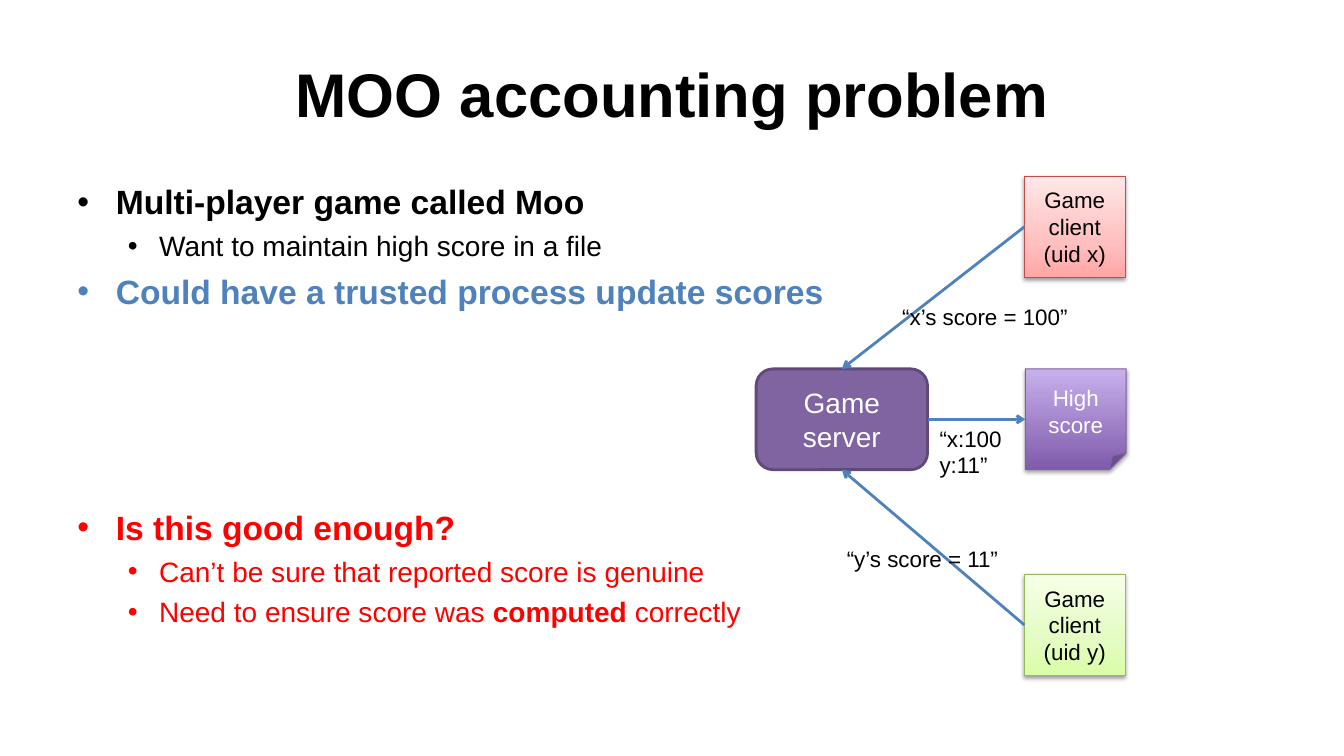
from dataclasses import dataclass

from lxml.etree import SubElement
from pptx import Presentation
from pptx.dml.color import RGBColor
from pptx.enum.shapes import MSO_CONNECTOR, MSO_SHAPE as SHAPE
from pptx.enum.text import MSO_ANCHOR, MSO_AUTO_SIZE, PP_ALIGN
from pptx.oxml.ns import qn
from pptx.util import Inches, Pt


@dataclass(frozen=True)
class Theme:
    font: str = "Arial"
    black: str = "000000"
    white: str = "FFFFFF"
    blue: str = "4F81BD"
    red: str = "FF0000"
    server_fill: str = "8064A2"
    server_line: str = "5F4A78"
    title: int = 44
    heading: int = 24
    detail: int = 20
    small: int = 16


THEME = Theme()
TITLE = "MOO accounting problem"
BULLETS = [
    (0, THEME.black, 6, [("Multi-player game called Moo", True)]),
    (1, THEME.black, 5, [("Want to maintain high score in a file", False)]),
    (0, THEME.blue, 6, [("Could have a trusted process update scores", True)]),
    (0, THEME.red, 140, [("Is this good enough?", True)]),
    (1, THEME.red, 5, [("Can’t be sure that reported score is genuine", False)]),
    (1, THEME.red, 5, [("Need to ensure score was ", False), ("computed ", True),
                       ("correctly", False)]),
]
LEVELS = [(0.38, -0.38, THEME.heading), (0.81, -0.31, THEME.detail)]
TILES = {
    "score": (SHAPE.FOLDED_CORNER, 10.17, 3.66, ["High score"], THEME.white, "7D60A0",
              [(0, "7F5BAB"), (100, "C8B0ED")], 35),
    "client y": (SHAPE.RECTANGLE, 10.16, 5.7, ["Game client", "(uid y)"], THEME.black, "98B955",
                 [(0, "DAFDA7"), (35, "E4FCC2"), (100, "F5FFE7")], 38),
    "client x": (SHAPE.RECTANGLE, 10.16, 1.75, ["Game client (uid x)"], THEME.black, "BF4C48",
                 [(0, "FFA6A5"), (35, "FFC0BF"), (100, "FFE7E7")], 38),
}
SERVER = (7.5, 3.66, 1.7, 1)
TOP, LEFT, BOTTOM, RIGHT = range(4)
ARROWS = [("client x", LEFT, "server", TOP), ("client y", LEFT, "server", BOTTOM),
          ("server", RIGHT, "score", LEFT)]
LABELS = [
    ((8.85, 2.96, 1.85, 0.37), ["“x’s score = 100”"]),
    ((8.3, 5.36, 1.72, 0.37), ["“y’s score = 11”"]),
    ((9.22, 4.16, 0.83, 0.64), ["“x:100", "y:11”"]),
]


def inches(*lengths):
    return [Inches(length) for length in lengths]


def add_span(para, text, size, color, bold=False):
    span = para.add_run()
    span.text = text
    span.font.name, span.font.size, span.font.bold = THEME.font, Pt(size), bold
    span.font.color.rgb = RGBColor.from_string(color)


def write(box, lines, size, color, align=PP_ALIGN.CENTER, bold=False, wrap=True):
    frame = box.text_frame
    frame.word_wrap = wrap
    frame.vertical_anchor = MSO_ANCHOR.MIDDLE
    for index, line in enumerate(lines):
        para = frame.add_paragraph() if index else frame.paragraphs[0]
        para.alignment = align
        add_span(para, line, size, color, bold)


def add_title(page):
    title = page.shapes.title
    title.left, title.top, title.width, title.height = inches(0.67, 0.3, 12, 1.25)
    write(title, [TITLE], THEME.title, THEME.black, bold=True)


def add_bullets(page):
    frame = page.shapes.add_textbox(*inches(0.67, 1.75, 12, 4.95)).text_frame
    frame.word_wrap = True
    for index, (level, color, space, spans) in enumerate(BULLETS):
        para = frame.add_paragraph() if index else frame.paragraphs[0]
        margin, indent, size = LEVELS[level]
        para.level, para.space_before = level, Pt(space)
        props = para._p.get_or_add_pPr()
        props.set("marL", str(Inches(margin)))
        props.set("indent", str(Inches(indent)))
        SubElement(props, qn("a:buFont"), typeface=THEME.font)
        SubElement(props, qn("a:buChar"), char="•")
        for text, bold in spans:
            add_span(para, text, size, color, bold)


def add_box(page, kind, place, line, width):
    box = page.shapes.add_shape(kind, *inches(*place))
    box.shadow.inherit = False
    box.line.color.rgb = RGBColor.from_string(line)
    box.line.width = Pt(width)
    return box


def shade(box, stops, opacity):
    """Give the box an upward gradient and a soft shadow below."""
    box.fill.gradient()
    box.fill.gradient_angle = 90
    props = box._element.spPr
    stop_list = props.find(qn("a:gradFill")).find(qn("a:gsLst"))
    for old in list(stop_list):
        stop_list.remove(old)
    for position, color in stops:
        stop = SubElement(stop_list, qn("a:gs"), pos=str(position * 1000))
        SubElement(stop, qn("a:srgbClr"), val=color)
    shadow = SubElement(props.find(qn("a:effectLst")), qn("a:outerShdw"), blurRad=str(Pt(3.1)),
                        dist=str(Pt(1.6)), dir="5400000", rotWithShape="0")
    tint = SubElement(shadow, qn("a:srgbClr"), val=THEME.black)
    SubElement(tint, qn("a:alpha"), val=str(opacity * 1000))


def add_arrow(page, start, start_side, end, end_side):
    arrow = page.shapes.add_connector(MSO_CONNECTOR.STRAIGHT, 0, 0, 0, 0)
    arrow.begin_connect(start, start_side)
    arrow.end_connect(end, end_side)
    arrow.line.color.rgb = RGBColor.from_string(THEME.blue)
    arrow.line.width = Pt(2)
    SubElement(arrow.line._get_or_add_ln(), qn("a:tailEnd"), type="arrow")
    SubElement(arrow._element.spPr, qn("a:effectLst"))


def add_diagram(page):
    boxes = {}
    for name, (kind, left, top, lines, color, line, stops, opacity) in TILES.items():
        boxes[name] = add_box(page, kind, (left, top, 1, 1), line, 0.75)
        shade(boxes[name], stops, opacity)
        write(boxes[name], lines, THEME.small, color)
    server = boxes["server"] = add_box(page, SHAPE.ROUNDED_RECTANGLE, SERVER, THEME.server_line, 2)
    server.fill.solid()
    server.fill.fore_color.rgb = RGBColor.from_string(THEME.server_fill)
    write(server, ["Game server"], THEME.detail, THEME.white)
    for start, start_side, end, end_side in ARROWS:
        add_arrow(page, boxes[start], start_side, boxes[end], end_side)
    for place, lines in LABELS:
        label = page.shapes.add_textbox(*inches(*place))
        write(label, lines, THEME.small, THEME.black, align=PP_ALIGN.LEFT, wrap=False)
        label.text_frame.auto_size = MSO_AUTO_SIZE.SHAPE_TO_FIT_TEXT


def main():
    deck = Presentation()
    deck.slide_width, deck.slide_height = inches(13.33, 7.5)
    page = deck.slides.add_slide(deck.slide_layouts[5])
    add_title(page)
    add_bullets(page)
    add_diagram(page)
    deck.save("out.pptx")


if __name__ == "__main__":
    main()
